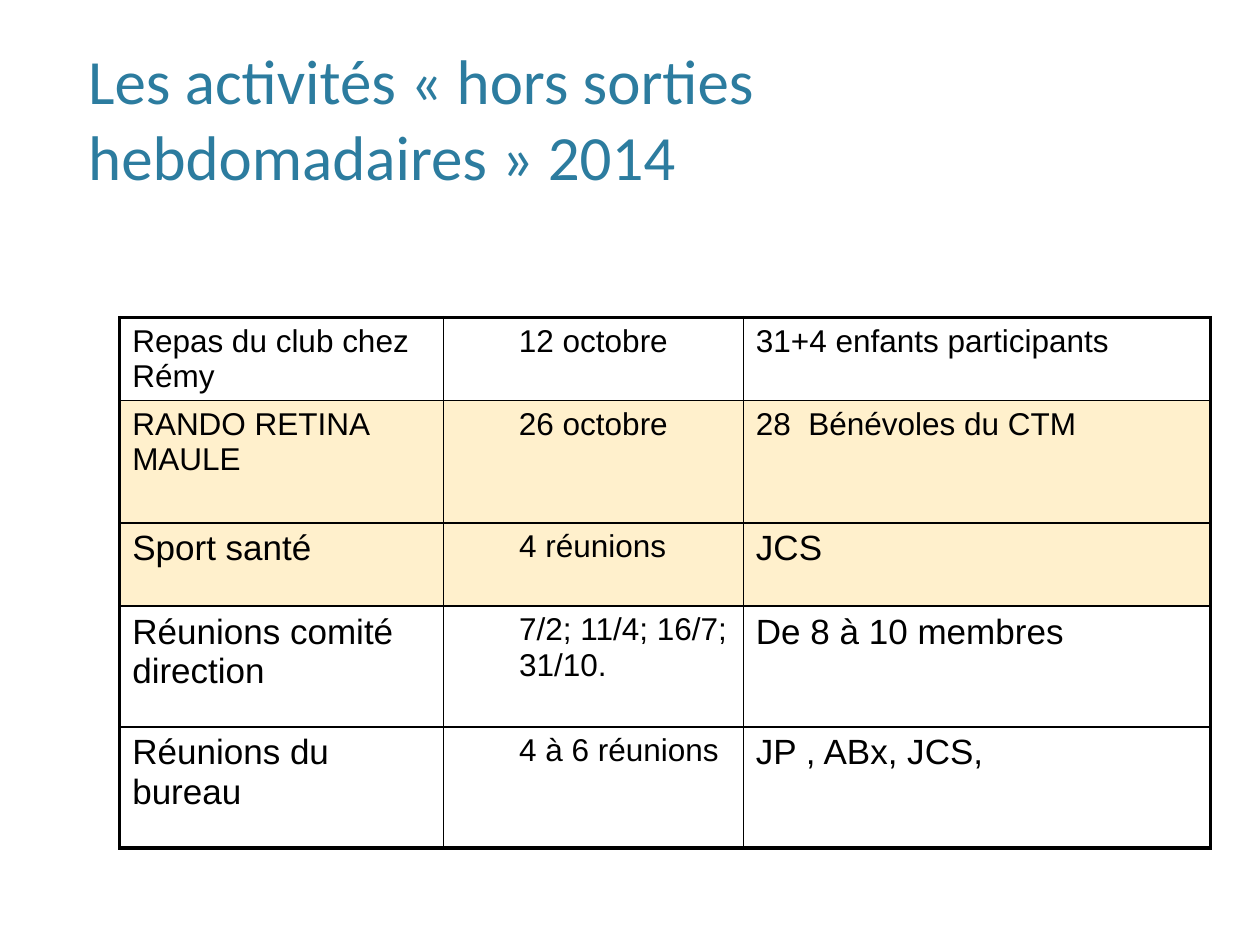
from lxml.etree import SubElement
from pptx import Presentation
from pptx.dml.color import RGBColor as RGB
from pptx.enum.text import MSO_ANCHOR as Anchor, PP_ALIGN as Align
from pptx.oxml.ns import qn
from pptx.util import Inches, Pt

COLORS = {"title": "2C7C9F", "text": "000000", "border": "000000", "highlight": "FFF0CC"}
TITLE = "Les activités «\u00a0hors sorties hebdomadaires\u00a0» 2014"
COLUMN_WIDTHS = [2.57, 2.38, 3.71]
ROW_HEIGHTS = [0.65, 0.97, 0.66, 0.96, 0.96]
TABLE_LEFT, TABLE_TOP = 0.95, 2.52
THIN, THICK = 1, 2.25
DATE_COLUMN = 1
DATED_EVENTS = (0, 1)
HIGHLIGHTED = (1, 2)
ACTIVITIES = [
    ("Repas du club chez Rémy", "12 octobre", "31+4 enfants participants"),
    ("RANDO RETINA MAULE", "26 octobre", "28  Bénévoles du CTM"),
    ("Sport santé", "4 réunions", "JCS"),
    ("Réunions comité direction", "7/2; 11/4; 16/7; 31/10.", "De 8 à 10 membres"),
    ("Réunions du bureau", "4 à 6 réunions", "JP , ABx, JCS,"),
]


def format_runs(paragraph, font_name, size, color):
    for run in paragraph.runs:
        run.font.name = font_name
        run.font.size = Pt(size)
        run.font.color.rgb = RGB.from_string(COLORS[color])


def add_title(slide):
    title = slide.shapes.title
    title.left, title.top = Inches(0.6), Inches(0.12)
    title.width, title.height = Inches(8.8), Inches(1.46)
    frame = title.text_frame
    frame.text = TITLE
    frame.word_wrap = True
    frame.vertical_anchor = Anchor.BOTTOM
    frame.paragraphs[0].alignment = Align.LEFT
    format_runs(frame.paragraphs[0], "Calibri", 36, "title")


def set_borders(cell, row, column):
    outer_sides = {
        "L": column == 0,
        "R": column == len(COLUMN_WIDTHS) - 1,
        "T": row == 0,
        "B": row == len(ROW_HEIGHTS) - 1,
    }
    properties = cell._tc.get_or_add_tcPr()
    for side, is_outer in outer_sides.items():
        width = Pt(THICK if is_outer else THIN)
        border = SubElement(properties, qn(f"a:ln{side}"), w=str(width))
        fill = SubElement(border, qn("a:solidFill"))
        SubElement(fill, qn("a:srgbClr"), val=COLORS["border"])


def fill_cell(cell, row, column, content):
    set_borders(cell, row, column)
    if row in HIGHLIGHTED:
        cell.fill.solid()
        cell.fill.fore_color.rgb = RGB.from_string(COLORS["highlight"])
    else:
        cell.fill.background()
    cell.text_frame.text = content
    paragraph = cell.text_frame.paragraphs[0]
    is_date = column == DATE_COLUMN
    if is_date and row in DATED_EVENTS:
        paragraph.alignment = Align.CENTER
    elif is_date:
        paragraph.level = 1
        paragraph_properties = paragraph._p.get_or_add_pPr()
        paragraph_properties.set("marL", str(Inches(0.5)))
        paragraph_properties.set("indent", "0")
    size = 18 if is_date or row in DATED_EVENTS else 20
    format_runs(paragraph, "Arial", size, "text")


def add_activities(slide):
    table = slide.shapes.add_table(
        len(ROW_HEIGHTS), len(COLUMN_WIDTHS), Inches(TABLE_LEFT), Inches(TABLE_TOP),
        Inches(sum(COLUMN_WIDTHS)), Inches(sum(ROW_HEIGHTS))).table
    table.first_row = table.horz_banding = False
    for column, width in zip(table.columns, COLUMN_WIDTHS):
        column.width = Inches(width)
    for row, height in zip(table.rows, ROW_HEIGHTS):
        row.height = Inches(height)
    for row, activity in enumerate(ACTIVITIES):
        for column, content in enumerate(activity):
            fill_cell(table.cell(row, column), row, column, content)


def main():
    deck = Presentation()
    deck.slide_width, deck.slide_height = Inches(10), Inches(7.5)
    slide = deck.slides.add_slide(deck.slide_layouts[5])
    add_title(slide)
    add_activities(slide)
    deck.save("out.pptx")


if __name__ == "__main__":
    main()
